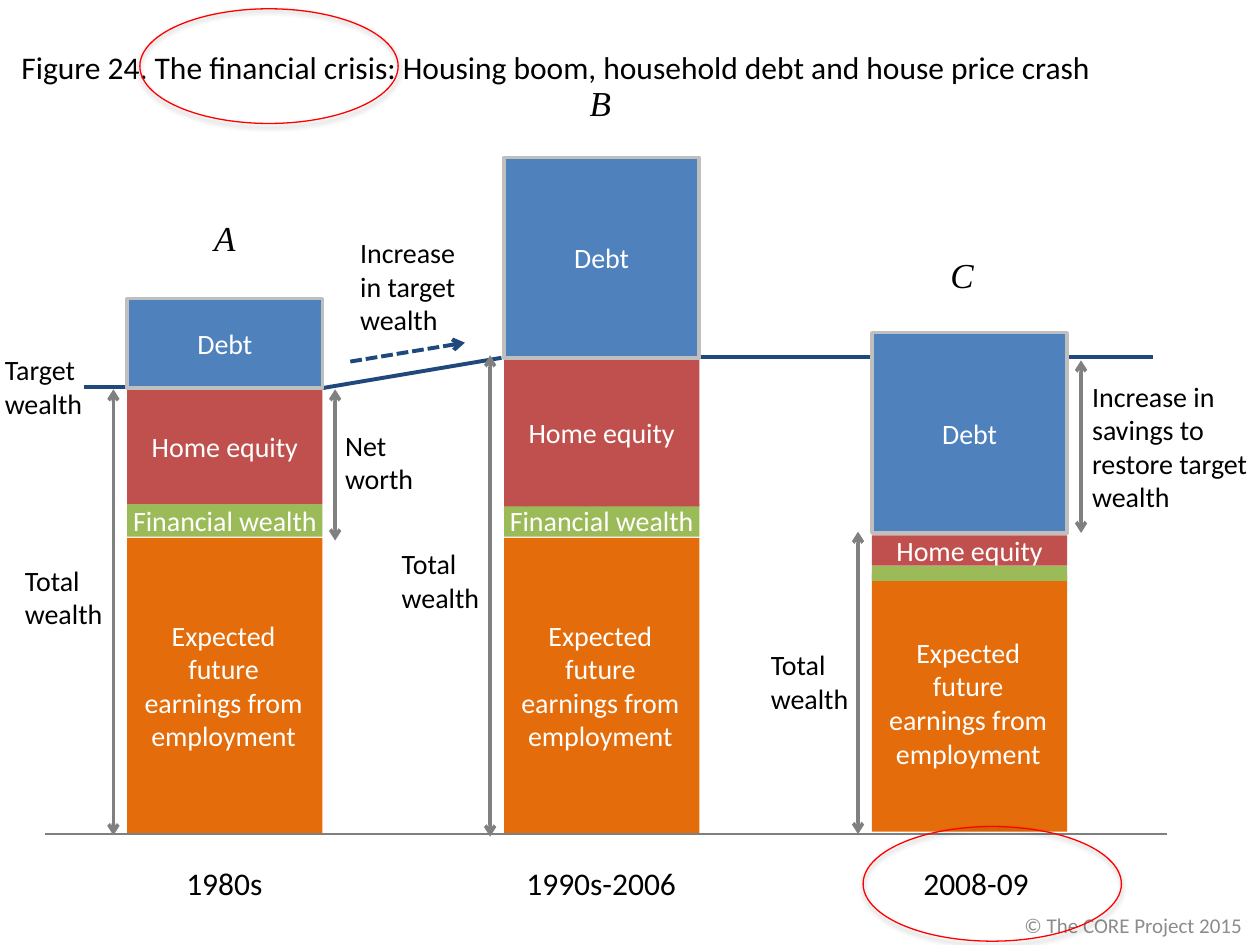
from lxml.etree import SubElement
from pptx import Presentation
from pptx.dml.color import RGBColor
from pptx.enum.shapes import MSO_CONNECTOR as Connector, MSO_SHAPE as Preset
from pptx.enum.text import MSO_ANCHOR as Anchor, MSO_AUTO_SIZE as AutoSize, PP_ALIGN as Align
from pptx.oxml.ns import qn
from pptx.util import Inches, Pt

COLUMNS, ROWS = 100, 75
WIDTH, HEIGHT = Inches(10), Inches(7.5)
BAR_WIDTH = 15.5
COLORS = {
    "text": "000000", "label": "FFFFFF", "notice": "8C8C8C",
    "axis": "7F7F7F", "measure": "808080", "target": "1F497D",
    "debt": "4F81BD", "border": "BFBFBF", "home": "C0504D",
    "financial": "9BBB59", "earnings": "E46C0A", "highlight": "FF0000",
}
SEGMENTS = {
    "earnings": ("Expected future earnings from employment", (1, 0.5, 1.2, 0.5)),
    "financial": ("Financial wealth", (0, 0, 0, 0)),
    "home": ("Home equity", (1, 0, 1, 0)),
    "debt": ("Debt", (1, 0.5, 1, 0.5)),
}
PERIODS = [
    {"left": 10.1, "letter": ("A", 10, 16.7), "name": ("1980s", 13.8, 8.1),
     "total": (30.9, 66.3), "total_label": (1, 44.2),
     "spans": {"earnings": (42.7, 23.4), "financial": (40, 2.6),
               "home": (30.8, 9.2), "debt": (23.7, 7.1)}},
    {"left": 69.2, "letter": ("C", 68.5, 19.6), "name": ("2008-09", 72.3, 10.5),
     "total": (42.2, 66.2), "total_label": (60.2, 50.9), "unlabelled": "financial",
     "spans": {"earnings": (45.5, 20.5), "financial": (44.9, 1.2),
               "home": (42.5, 2.4), "debt": (26.4, 15.9)}},
    {"left": 40, "letter": ("B", 39.8, 6), "name": ("1990s-2006", 40.8, 14),
     "total": (28.2, 66.4), "total_label": (30.9, 42.9),
     "spans": {"earnings": (42.7, 23.4), "financial": (40, 2.6),
               "home": (28.4, 11.8), "debt": (12.5, 15.9)}},
]


def col(count):
    return round(WIDTH * count / COLUMNS)


def row(count):
    return round(HEIGHT * count / ROWS)


def grid_box(left, top, width, height):
    return col(left), row(top), col(width), row(height)


def color(name):
    return RGBColor.from_string(COLORS[name])


def write(frame, lines, size=16, ink="text", align=Align.LEFT, font="Calibri", italic=False):
    for index, line in enumerate(lines):
        paragraph = frame.paragraphs[0] if index == 0 else frame.add_paragraph()
        paragraph.alignment = align
        run = paragraph.add_run()
        run.text = line
        run.font.size, run.font.name, run.font.italic = Pt(size), font, italic
        run.font.color.rgb = color(ink)


def add_label(slide, place, *lines, wrap=False, anchor=Anchor.TOP, **style):
    frame = slide.shapes.add_textbox(*grid_box(*place)).text_frame
    frame.word_wrap = wrap
    frame.vertical_anchor = anchor
    write(frame, lines, **style)


def add_title(slide, text):
    title = slide.shapes.title
    title.left, title.top, title.width, title.height = grid_box(0.7, 3.3, 99.1, 4)
    frame = title.text_frame
    frame.auto_size = AutoSize.NONE
    frame.vertical_anchor = Anchor.TOP
    write(frame, [text], size=18)


def add_line(slide, start, end, ink, weight, ends=(), dash=None):
    line = slide.shapes.add_connector(
        Connector.STRAIGHT, col(start[0]), row(start[1]), col(end[0]), row(end[1]))
    line.line.color.rgb = color(ink)
    line.line.width = Pt(weight)
    properties = line._element.spPr
    outline = properties.find(qn("a:ln"))
    if dash:
        SubElement(outline, qn("a:prstDash"), val=dash)
    for tip in ends:
        SubElement(outline, qn(f"a:{tip}End"), type="arrow")
    SubElement(properties, qn("a:effectLst"))


def add_measure(slide, x, top, bottom):
    add_line(slide, (x, top), (x, bottom), "measure", 2, ("head", "tail"))


def add_segment(slide, kind, place, labelled):
    segment = slide.shapes.add_shape(Preset.RECTANGLE, *grid_box(*place))
    segment.shadow.inherit = False
    segment.fill.solid()
    segment.fill.fore_color.rgb = color(kind)
    if kind == "debt":
        segment.line.color.rgb = color("border")
        segment.line.width = Pt(2)
    else:
        segment.line.fill.background()
    if labelled:
        text, insets = SEGMENTS[kind]
        frame = segment.text_frame
        frame.word_wrap = True
        frame.vertical_anchor = Anchor.MIDDLE
        frame.margin_left, frame.margin_top, frame.margin_right, frame.margin_bottom = grid_box(*insets)
        write(frame, [text], ink="label", align=Align.CENTER)


def add_period(slide, period):
    left = period["left"]
    for kind, (top, height) in period["spans"].items():
        add_segment(slide, kind, (left, top, BAR_WIDTH, height), kind != period.get("unlabelled"))
    name, name_left, name_width = period["name"]
    add_label(slide, (name_left, 68.1, name_width, 4), name, size=18)
    letter, letter_left, letter_top = period["letter"]
    add_label(slide, (letter_left, letter_top, 15.7, 4.4), letter, wrap=True, size=20,
              align=Align.CENTER, font="Times New Roman", italic=True)
    add_measure(slide, left - 1.1, *period["total"])
    add_label(slide, (*period["total_label"], 8.3, 6.4), "Total", "wealth")


def add_highlight(slide, left, top):
    ring = slide.shapes.add_shape(Preset.OVAL, *grid_box(left, top, 20.5, 9.1))
    ring.shadow.inherit = False
    ring.fill.background()
    ring.line.color.rgb = color("highlight")
    ring.line.width = Pt(0.75)
    effects = ring._element.spPr.find(qn("a:effectLst"))
    shadow = SubElement(effects, qn("a:outerShdw"), blurRad=str(Pt(3.1)), dist=str(Pt(1.8)),
                        dir="5400000", rotWithShape="0")
    shade = SubElement(shadow, qn("a:srgbClr"), val=COLORS["text"])
    SubElement(shade, qn("a:alpha"), val="35000")


def main():
    deck = Presentation()
    deck.slide_width, deck.slide_height = WIDTH, HEIGHT
    slide = deck.slides.add_slide(deck.slide_layouts[5])
    add_title(slide, "Figure 24. The financial crisis: Housing boom, household debt and house price crash")

    add_line(slide, (3.6, 66.2), (92.6, 66.2), "axis", 1.5)
    add_line(slide, (25.6, 30.8), (39.8, 28.4), "target", 2.25)
    add_line(slide, (27.8, 28.7), (36.9, 27.2), "target", 2.25, ("tail",), "sysDash")
    add_line(slide, (6.7, 30.7), (14.9, 30.7), "target", 2.25)
    add_line(slide, (44.3, 28.3), (91.5, 28.3), "target", 2.25)

    add_measure(slide, 26.6, 30.9, 42.9)
    add_label(slide, (26.4, 33.5, 7.5, 6.4), "Net", "worth")
    add_measure(slide, 85.8, 28.6, 42.3)
    add_label(slide, (85.7, 29.6, 17, 11.8), "Increase in savings to restore target wealth", wrap=True)
    add_label(slide, (27.6, 18.2, 9.8, 9.1), "Increase", "in target", "wealth")
    add_label(slide, (-0.6, 27.5, 8.3, 6.4), "Target", "wealth")

    for period in PERIODS:
        add_period(slide, period)

    add_label(slide, (79.8, 71.9, 20.3, 3.1), "© The CORE Project 2015", wrap=True,
              anchor=Anchor.MIDDLE, size=12, ink="notice", align=Align.CENTER)
    for left, top in ((11.1, 0.7), (68.5, 65.6)):
        add_highlight(slide, left, top)
    deck.save("out.pptx")


if __name__ == "__main__":
    main()
